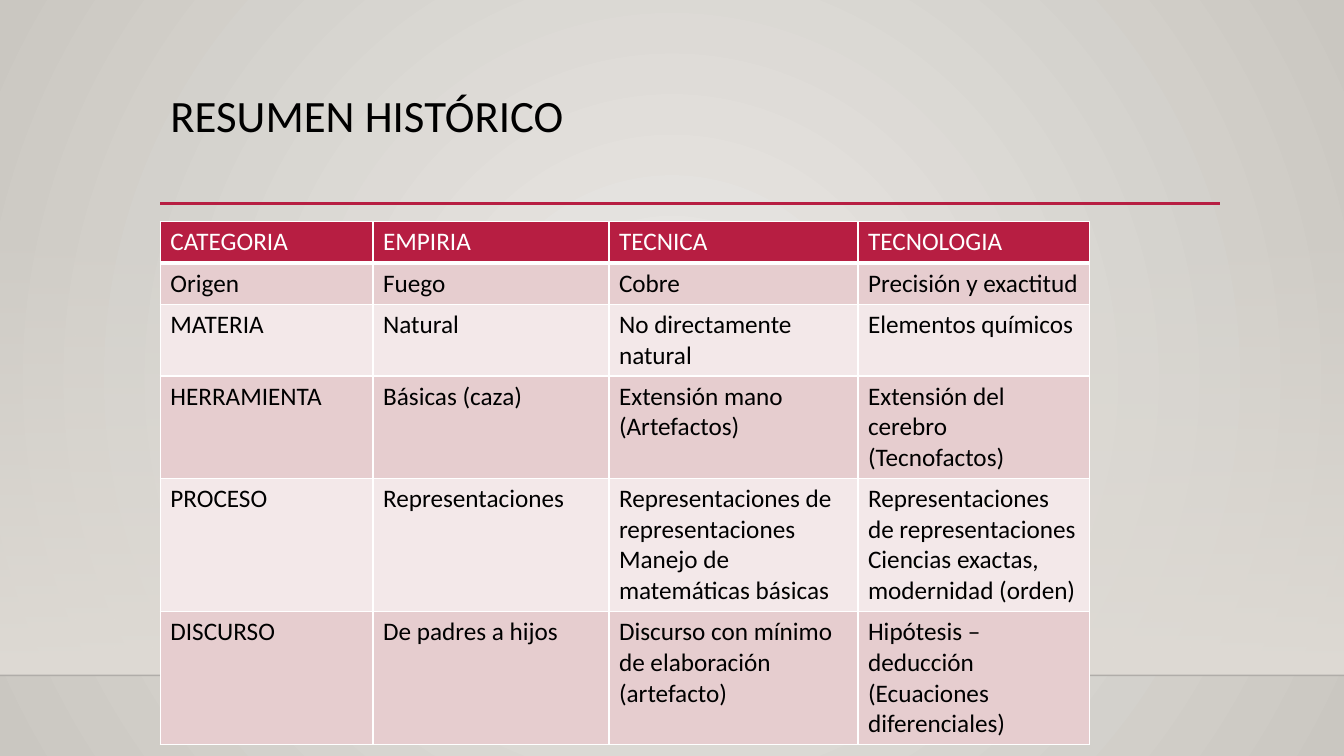
from dataclasses import dataclass

from lxml import etree
from pptx import Presentation
from pptx import util as u
from pptx.dml.color import RGBColor
from pptx.enum import shapes, text
from pptx.oxml import ns

RED = RGBColor(0xB7, 0x1E, 0x42)
ROSE = RGBColor(0xE6, 0xCD, 0xCF)
PALE = RGBColor(0xF3, 0xE8, 0xE9)
WHITE = RGBColor(0xFF, 0xFF, 0xFF)
BLACK = RGBColor(0x00, 0x00, 0x00)
INK = RGBColor(0x00, 0x00, 0x01)
SAND = RGBColor(0xDF, 0xDB, 0xD5)
LIGHT = RGBColor(0xEC, 0xEA, 0xE7)
DARK = RGBColor(0xCA, 0xC7, 0xC1)

FONT = "Calibri"
LEFT = 1.59
WIDTHS = [2.11, 2.34, 2.47, 2.3]
ROW_H = 0.41
ROWS = [
    ["CATEGORIA", "EMPIRIA", "TECNICA", "TECNOLOGIA"],
    ["Origen", "Fuego", "Cobre", "Precisión y exactitud"],
    ["MATERIA", "Natural", "No directamente natural", "Elementos químicos"],
    ["HERRAMIENTA", "Básicas (caza)", "Extensión mano (Artefactos)",
     "Extensión del cerebro (Tecnofactos)"],
    ["PROCESO", "Representaciones",
     "Representaciones de representaciones\nManejo de matemáticas básicas",
     "Representaciones de representaciones\n"
     "Ciencias exactas, modernidad (orden)"],
    ["DISCURSO", "De padres a hijos",
     "Discurso con mínimo de elaboración (artefacto)",
     "Hipótesis – deducción (Ecuaciones diferenciales)"],
]


@dataclass
class Rule:
    x1: float
    x2: float
    y: float
    color: RGBColor
    width: float
    alpha: int = 100


RULES = [
    Rule(0, 13.33, 6.7, INK, 1, 20),
    Rule(LEFT, 12.1, 2.02, RED, 2.5),
]


def add(parent, tag: str, **attrs: str):
    return etree.SubElement(parent, ns.qn(tag), attrs)


def set_alpha(color, percent: int) -> None:
    add(color, "a:alpha", val=str(percent * 1000))


def blend(fill, first: RGBColor, last: RGBColor) -> None:
    fill.gradient()
    for stop, color, pos in zip(fill.gradient_stops, (first, last), (0, 1)):
        stop.color.rgb = color
        stop.position = pos


def draw_rule(slide, rule: Rule) -> None:
    y = u.Inches(rule.y)
    line = slide.shapes.add_connector(
        shapes.MSO_CONNECTOR.STRAIGHT,
        u.Inches(rule.x1), y, u.Inches(rule.x2), y)
    line.line.color.rgb = rule.color
    line.line.width = u.Pt(rule.width)
    props = line._element.spPr
    if rule.alpha < 100:
        set_alpha(props.find(".//" + ns.qn("a:srgbClr")), rule.alpha)
    add(props, "a:effectLst")


def draw_back(slide) -> None:
    # Round glow from the centre
    fill = slide.background.fill
    blend(fill, LIGHT, DARK)
    grad = slide._element.find(".//" + ns.qn("a:gradFill"))
    grad.remove(grad.find(ns.qn("a:lin")))
    glow = add(grad, "a:path", path="circle")
    add(glow, "a:fillToRect", l="50000", t="50000", r="50000", b="50000")

    # Wall fading in downwards
    wall = slide.shapes.add_shape(
        shapes.MSO_SHAPE.RECTANGLE, 0, u.Inches(2.21),
        u.Inches(13.33), u.Inches(4.49))
    wall.shadow.inherit = False
    wall.line.fill.background()
    blend(wall.fill, SAND, SAND)
    wall.fill.gradient_angle = 270
    set_alpha(wall._element.spPr.find(".//" + ns.qn("a:srgbClr")), 0)


def draw_title(slide) -> None:
    title = slide.shapes.title
    title.left, title.top = u.Inches(LEFT), u.Inches(0.88)
    title.width, title.height = u.Inches(10.5), u.Inches(1.15)
    frame = title.text_frame
    frame.text = "RESUMEN HISTÓRICO"
    frame.vertical_anchor = text.MSO_ANCHOR.TOP
    para = frame.paragraphs[0]
    para.alignment = text.PP_ALIGN.LEFT
    para.line_spacing = 0.9
    style(para, 32, BLACK)


def style(para, size: float, color: RGBColor) -> None:
    for run in para.runs:
        run.font.name = FONT
        run.font.size = u.Pt(size)
        run.font.bold = False
        run.font.color.rgb = color


def edge(cell, side: str, width: float) -> None:
    line = add(cell._tc.get_or_add_tcPr(), "a:ln" + side,
               w=str(u.Pt(width)))
    add(add(line, "a:solidFill"), "a:srgbClr", val=str(WHITE))


def draw_table(slide) -> None:
    table = slide.shapes.add_table(
        len(ROWS), len(WIDTHS), u.Inches(LEFT), u.Inches(2.2),
        u.Inches(sum(WIDTHS)), u.Inches(ROW_H * len(ROWS))).table
    for col, width in zip(table.columns, WIDTHS):
        col.width = u.Inches(width)
    for r, row in enumerate(ROWS):
        table.rows[r].height = u.Inches(ROW_H)
        head = r == 0
        for c, words in enumerate(row):
            cell = table.cell(r, c)
            cell.text_frame.text = words
            for para in cell.text_frame.paragraphs:
                style(para, 18, WHITE if head else BLACK)
            for side in "LRTB":
                edge(cell, side, 3 if head and side == "B" else 1)
            cell.fill.solid()
            cell.fill.fore_color.rgb = RED if head else (PALE, ROSE)[r % 2]


def main() -> None:
    deck = Presentation()
    deck.slide_width, deck.slide_height = u.Inches(13.33), u.Inches(7.5)
    slide = deck.slides.add_slide(deck.slide_layouts[5])
    draw_back(slide)
    for rule in RULES:
        draw_rule(slide, rule)
    draw_title(slide)
    draw_table(slide)
    deck.save("out.pptx")


if __name__ == "__main__":
    main()
